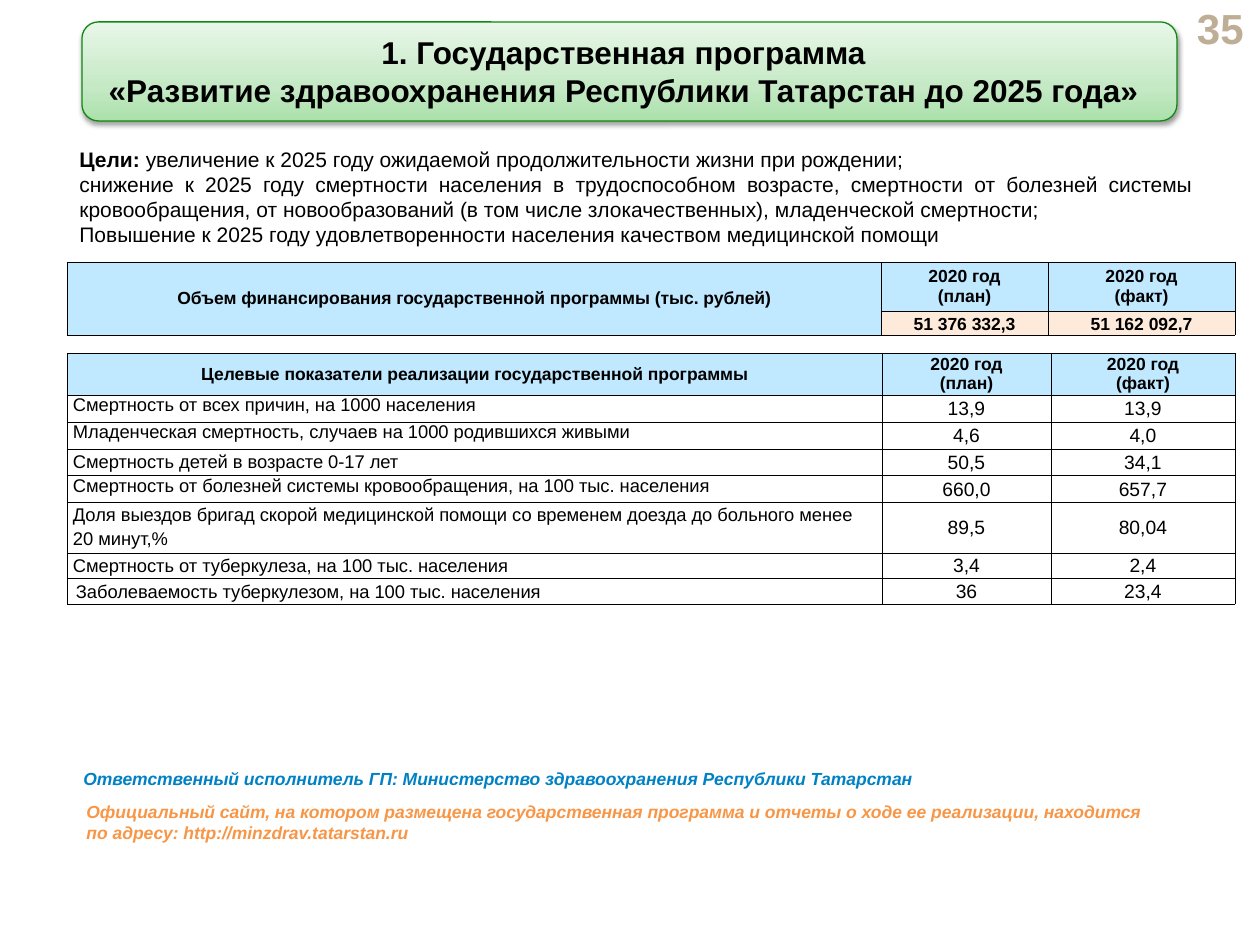
from copy import deepcopy

from lxml.etree import SubElement
from pptx import Presentation
from pptx.dml.color import RGBColor
from pptx.enum.shapes import MSO_SHAPE as SHAPE
from pptx.enum.text import MSO_ANCHOR as ANCHOR, PP_ALIGN as ALIGN
from pptx.oxml.ns import qn
from pptx.util import Pt

PX = 914400 / 126
COLORS = {
    "text": "000000", "number": "BFAE96", "header": "C0E9FF", "money": "FDEADA",
    "cell": "FFFFFF", "border": "000000", "line": "108812", "owner": "0081C5",
    "site": "F79646", "deep": "ABE1AB", "mid": "C5E9C5", "pale": "E8F7E8",
}
PLAN, FACT = ("2020 год", "(план)"), ("2020 год", "(факт)")
INDICATORS = [
    ("Смертность от всех причин, на 1000 населения", "13,9", "13,9"),
    ("Младенческая смертность, случаев на 1000 родившихся живыми", "4,6", "4,0"),
    ("Смертность детей в возрасте 0-17 лет", "50,5", "34,1"),
    ("Смертность от болезней системы кровообращения, на 100 тыс. населения", "660,0", "657,7"),
    ("Доля выездов бригад скорой медицинской помощи со временем доезда до больного менее "
     "20 минут,%", "89,5", "80,04"),
    ("Смертность от туберкулеза, на 100 тыс. населения", "3,4", "2,4"),
    ("Заболеваемость туберкулезом, на 100 тыс. населения", "36", "23,4"),
]
GOALS = (
    "увеличение к 2025 году ожидаемой продолжительности жизни при рождении;",
    "снижение к 2025 году смертности населения в трудоспособном возрасте, смертности от болезней "
    "системы кровообращения, от новообразований (в том числе злокачественных), младенческой "
    "смертности;",
    "Повышение к 2025 году удовлетворенности населения качеством медицинской помощи",
)


def px(*values):
    """Turn pixel lengths into EMU."""
    return [round(v * PX) for v in values]


def rgb(name):
    """Look up a palette colour."""
    return RGBColor.from_string(COLORS[name])


def write(tf, *lines, size=10, color="text", bold=False, italic=False,
          align=ALIGN.LEFT, spacing=1.0, label=""):
    """Write one paragraph per line, with an optional bold label in front."""
    for i, line in enumerate(lines):
        p = tf.paragraphs[0] if i == 0 else tf.add_paragraph()
        p.alignment, p.line_spacing = align, spacing
        parts = [(label, True)] if label and i == 0 else []
        for text, heavy in parts + [(line, bold)]:
            for j, piece in enumerate(text.split("\n")):
                if j:
                    p.add_line_break()
                r = p.add_run()
                r.text = piece
                r.font.name, r.font.size = "Arial", Pt(size)
                r.font.bold, r.font.italic = heavy, italic
                r.font.color.rgb = rgb(color)


def text_box(s, box, *lines, anchor=ANCHOR.TOP, **fmt):
    """Add a wrapping text box."""
    tf = s.shapes.add_textbox(*px(*box)).text_frame
    tf.word_wrap, tf.vertical_anchor = True, anchor
    write(tf, *lines, **fmt)


def title_banner(s, box):
    """Add the green title banner with its gradient and soft shadow."""
    sp = s.shapes.add_shape(SHAPE.ROUNDED_RECTANGLE, *px(*box))
    sp.line.color.rgb, sp.line.width = rgb("line"), Pt(0.75)
    sp.fill.gradient()
    sp.fill.gradient_angle = 90
    stops = sp.element.spPr.find(qn("a:gradFill")).find(qn("a:gsLst"))
    stops.insert(1, deepcopy(stops[0]))
    for stop, name, pos in zip(sp.fill.gradient_stops, ("deep", "mid", "pale"), (0, 0.35, 1)):
        stop.color.rgb, stop.position = rgb(name), pos
    sp.shadow.inherit = False
    shadow = SubElement(sp.element.spPr.find(qn("a:effectLst")), qn("a:outerShdw"),
                        blurRad=str(Pt(3.1)), dist=str(Pt(1.6)), dir="5400000", rotWithShape="0")
    tint = SubElement(shadow, qn("a:srgbClr"), val=COLORS["text"])
    SubElement(tint, qn("a:alpha"), val="38000")
    tf = sp.text_frame
    tf.word_wrap, tf.vertical_anchor = True, ANCHOR.TOP
    tf.margin_right = px(24)[0]
    write(tf, "1. Государственная программа\n«Развитие здравоохранения Республики Татарстан до 2025 года»",
          size=18, bold=True, align=ALIGN.CENTER)


def grid(s, x, y, cols, rows):
    """Add a bordered table with the given column widths and row heights."""
    tbl = s.shapes.add_table(len(rows), len(cols), *px(x, y, sum(cols), sum(rows))).table
    tbl.first_row = tbl.horz_banding = False
    for tracks, sizes, side in ((tbl.columns, cols, "width"), (tbl.rows, rows, "height")):
        for track, size in zip(tracks, px(*sizes)):
            setattr(track, side, size)
    for cell in tbl.iter_cells():
        for edge in ("lnL", "lnR", "lnT", "lnB"):
            ln = SubElement(cell._tc.get_or_add_tcPr(), qn(f"a:{edge}"), w=str(Pt(0.25)))
            SubElement(SubElement(ln, qn("a:solidFill")), qn("a:srgbClr"), val=COLORS["border"])
    return tbl


def fill_cell(cell, *lines, fill="cell", inset=6, anchor=ANCHOR.MIDDLE, **fmt):
    """Fill one cell with colour and text."""
    cell.fill.solid()
    cell.fill.fore_color.rgb = rgb(fill)
    cell.margin_left = cell.margin_right = px(inset)[0]
    cell.margin_top = cell.margin_bottom = 0
    cell.vertical_anchor = anchor
    write(cell.text_frame, *lines, **fmt)


def header_row(tbl, caption):
    """Fill the caption and the plan and fact headings."""
    for c, lines in enumerate(((caption,), PLAN, FACT)):
        fill_cell(tbl.cell(0, c), *lines, fill="header", bold=True, align=ALIGN.CENTER)


def funding_table(s, x, y):
    """Add the funding table."""
    tbl = grid(s, x, y, (814, 167, 187), (49, 24))
    tbl.cell(0, 0).merge(tbl.cell(1, 0))
    header_row(tbl, "Объем финансирования государственной программы (тыс. рублей)")
    for c, value in enumerate(("51 376 332,3", "51 162 092,7"), 1):
        fill_cell(tbl.cell(1, c), value, fill="money", inset=9, bold=True,
                  align=ALIGN.CENTER, spacing=1.15)


def indicator_table(s, x, y):
    """Add the table of target indicators."""
    tbl = grid(s, x, y, (815, 169, 184), (42, 26, 27, 27, 26, 51, 25, 25))
    header_row(tbl, "Целевые показатели реализации государственной программы")
    for i, (name, *values) in enumerate(INDICATORS, 1):
        fill_cell(tbl.cell(i, 0), name, size=10.5, anchor=ANCHOR.TOP,
                  inset=9 if i == len(INDICATORS) else 6,
                  spacing=1.0 if i in (1, 2, 4) else 1.15)
        top = i < 5
        for c, value in enumerate(values, 1):
            fill_cell(tbl.cell(i, c), value, size=11, align=ALIGN.CENTER,
                      anchor=ANCHOR.TOP if top else ANCHOR.MIDDLE,
                      inset=9 if top else 1, spacing=1.15 if top else 1.0)


def footer(s, x, y):
    """Add the responsible body and the site address."""
    text_box(s, (x, y, 1176, 34),
             "Ответственный исполнитель ГП: Министерство здравоохранения Республики Татарстан",
             color="owner", bold=True, italic=True)
    text_box(s, (x + 3, y + 33, 1103, 55),
             "Официальный сайт, на котором размещена государственная программа и отчеты о ходе ее "
             "реализации, находится по адресу: http://minzdrav.tatarstan.ru",
             color="site", bold=True, italic=True)


def main():
    """Build the slide and save it."""
    prs = Presentation()
    prs.slide_width, prs.slide_height = px(1260, 945)
    s = prs.slides.add_slide(prs.slide_layouts[6])
    text_box(s, (1175, 6, 81, 43), "35", size=24, color="number", bold=True,
             align=ALIGN.RIGHT, anchor=ANCHOR.MIDDLE)
    funding_table(s, 67, 262)
    indicator_table(s, 67, 353)
    text_box(s, (67, 139, 1139, 115), *GOALS, label="Цели: ", size=12,
             align=ALIGN.JUSTIFY, anchor=ANCHOR.MIDDLE)
    title_banner(s, (82, 22, 1095, 99))
    footer(s, 71, 762)
    prs.save("out.pptx")


if __name__ == "__main__":
    main()
